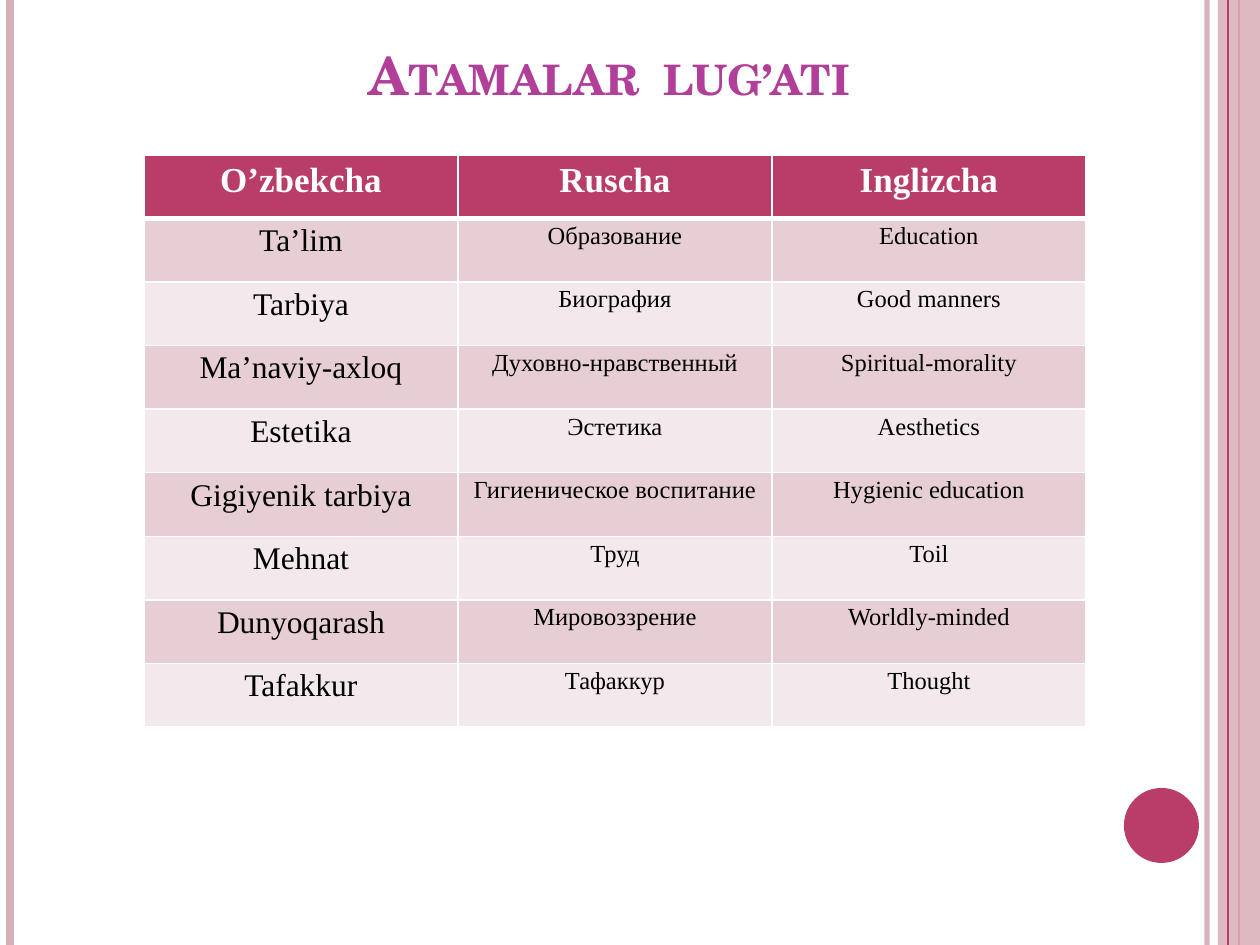
"""Build the slide with the three-language glossary table."""
from lxml import etree
from pptx import Presentation
from pptx.dml.color import RGBColor
from pptx.enum.shapes import MSO_CONNECTOR, MSO_SHAPE
from pptx.enum.text import MSO_ANCHOR, PP_ALIGN
from pptx.oxml.ns import qn
from pptx.util import Inches, Pt

LINE = MSO_CONNECTOR.STRAIGHT
RECT, OVAL = MSO_SHAPE.RECTANGLE, MSO_SHAPE.OVAL
BOTTOM, CENTER = MSO_ANCHOR.BOTTOM, PP_ALIGN.CENTER

WIDE, HIGH = 1260, 945
SCALE = Inches(10) / WIDE
HEX = {"rose": "B83D68", "pink": "D8AFB9", "plum": "B13F9A", "white": "FFFFFF",
       "black": "000000", "dark": "E6CED4", "light": "F3E8EB"}
SERIF, SCHOOL = "Times New Roman", "TeX Gyre Schola"

TITLE = "Atamalar  lug’ati"
TERMS = [
    ("O’zbekcha", "Ruscha", "Inglizcha"),
    ("Ta’lim", "Образование", "Education"),
    ("Tarbiya", "Биография", "Good manners"),
    ("Ma’naviy-axloq", "Духовно-нравственный", "Spiritual-morality"),
    ("Estetika", "Эстетика", "Aesthetics"),
    ("Gigiyenik tarbiya", "Гигиеническое воспитание", "Hygienic education"),
    ("Mehnat", "Труд", "Toil"),
    ("Dunyoqarash", "Мировоззрение", "Worldly-minded"),
    ("Tafakkur", "Тафаккур", "Thought"),
]
BACK = [(1207, "pink", 3, 93), (10, "pink", 4.5, 100), (1239, "rose", 1.5, 100)]
FRONT = (1228, "rose", 0.75, 100)
BAND, DOT = (1218, 0, 42, HIGH), (1124, 788, 75, 75)
HEAD, GRID = (94, 0, 1030, 112), (144, 155, 942, 572)


def px(*sides):
    return [round(side * SCALE) for side in sides]


def color(name):
    return RGBColor.from_string(HEX[name])


def fade(fill, share):
    if share < 100:
        tint = fill._xPr.find(".//" + qn("a:srgbClr"))
        etree.SubElement(tint, qn("a:alpha"), val=str(share * 1000))


def write(frame, text, size, tone, font=SERIF, bold=False, space=None, caps=False):
    part = frame.paragraphs[0]
    part.alignment = CENTER
    if space:
        part.line_spacing = space
    run = part.add_run()
    run.text = text
    run.font.name, run.font.size, run.font.bold = font, Pt(size), bold
    run.font.color.rgb = color(tone)
    if caps:
        run._r.get_or_add_rPr().set("cap", "small")


def stripe(slide, left, tone, width, share):
    line = slide.shapes.add_connector(LINE, *px(left, 0, left, HIGH))
    line.line.color.rgb = color(tone)
    line.line.width = Pt(width)
    fade(line.line.fill, share)
    etree.SubElement(line._element.spPr, qn("a:effectLst"))


def block(slide, kind, box, tone, share=100):
    shape = slide.shapes.add_shape(kind, *px(*box))
    shape.shadow.inherit = False
    shape.fill.solid()
    shape.fill.fore_color.rgb = color(tone)
    fade(shape.fill, share)
    shape.line.fill.background()


def border(cell, row):
    props = cell._tc.get_or_add_tcPr()
    thick = {0: "B", 1: "T"}.get(row)
    for spot, side in enumerate("LRTB"):
        width = Pt(3 if side == thick else 1)
        edge = etree.Element(qn("a:ln" + side), w=str(width))
        fill = etree.SubElement(edge, qn("a:solidFill"))
        etree.SubElement(fill, qn("a:srgbClr"), val=HEX["white"])
        props.insert(spot, edge)


def glossary(slide):
    rows, cols = len(TERMS), len(TERMS[0])
    table = slide.shapes.add_table(rows, cols, *px(*GRID)).table
    for col in table.columns:
        col.width = px(GRID[2] / cols)[0]
    for r, words in enumerate(TERMS):
        table.rows[r].height = px(GRID[3] / rows)[0]
        for c, word in enumerate(words):
            cell = table.cell(r, c)
            cell.margin_left = cell.margin_right = px(9)[0]
            cell.margin_top = cell.margin_bottom = 0
            cell.fill.solid()
            shade = "rose" if r == 0 else "dark" if r % 2 else "light"
            cell.fill.fore_color.rgb = color(shade)
            border(cell, r)
            size = 20 if r == 0 else 14 if c else 18
            write(cell.text_frame, word, size, "black" if r else "white",
                  bold=r == 0, space=1.15)


def main():
    deck = Presentation()
    deck.slide_width, deck.slide_height = px(WIDE, HIGH)
    slide = deck.slides.add_slide(deck.slide_layouts[6])
    for line in BACK:
        stripe(slide, *line)
    block(slide, RECT, BAND, "pink", 87)
    stripe(slide, *FRONT)
    block(slide, OVAL, DOT, "rose")
    frame = slide.shapes.add_textbox(*px(*HEAD)).text_frame
    frame.word_wrap, frame.vertical_anchor = True, BOTTOM
    write(frame, TITLE, 30, "plum", SCHOOL, bold=True, caps=True)
    glossary(slide)
    deck.save("out.pptx")


if __name__ == "__main__":
    main()
